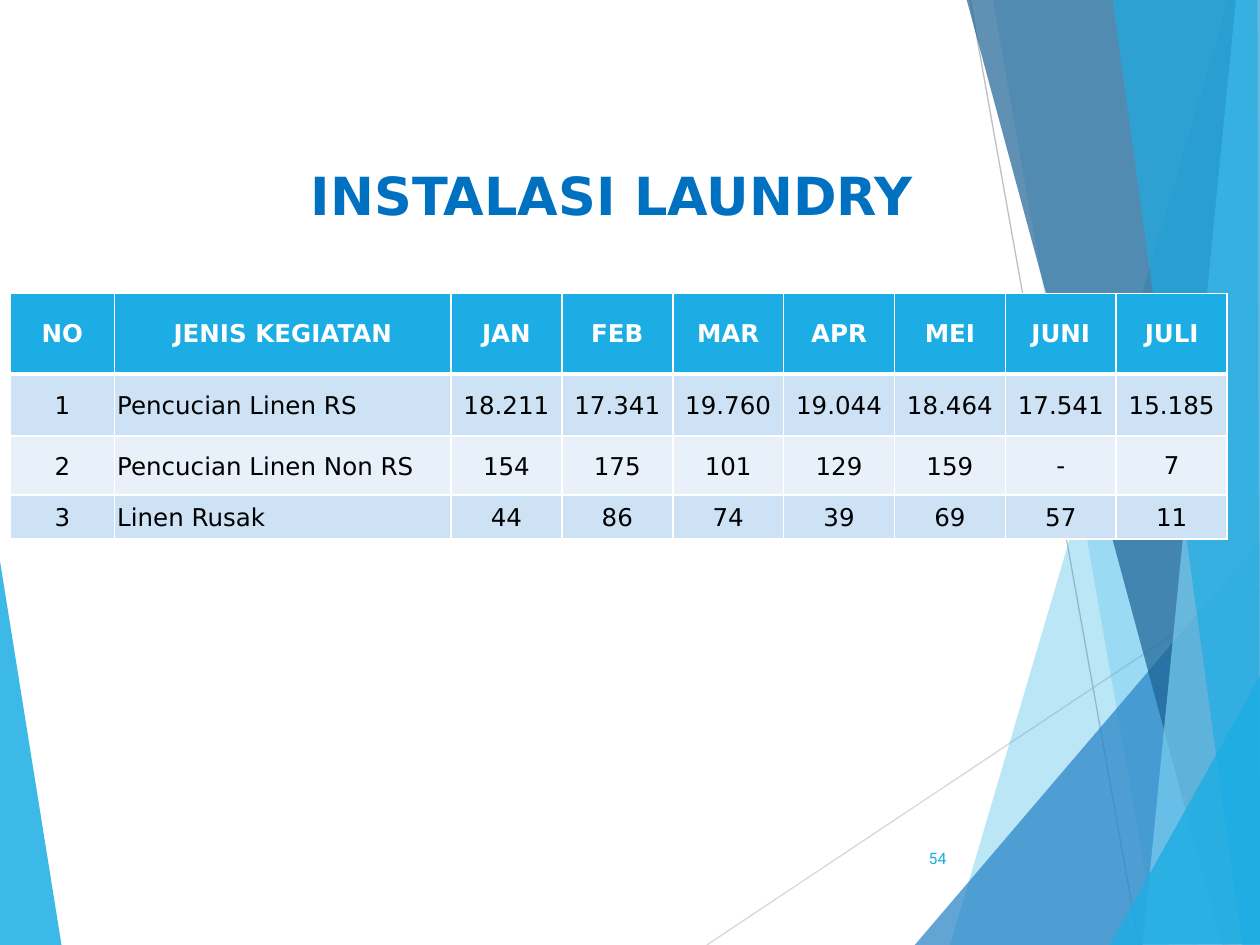
from typing import NamedTuple

from lxml import etree
from pptx import Presentation
from pptx import util as u
from pptx.dml.color import RGBColor
from pptx.enum import shapes, text
from pptx.oxml.ns import qn

FONT = "DejaVu Sans"
CENTER, LEFT, RIGHT = text.PP_ALIGN.CENTER, text.PP_ALIGN.LEFT, text.PP_ALIGN.RIGHT
MIDDLE = text.MSO_ANCHOR.MIDDLE
BLUE, WHITE, BLACK = "1CADE4", "FFFFFF", "000000"


class Facet(NamedTuple):
    color: str
    opacity: int  # percent
    points: list[tuple[float, float]]


class Ray(NamedTuple):
    start: tuple[float, float]
    end: tuple[float, float]
    color: str


class RowStyle(NamedTuple):
    height: float
    fill: str


RAYS = [
    Ray((5.61, 7.5), (10.01, 4.57), "D9D9D9"),
    Ray((7.7, 0), (9.04, 7.5), "BFBFBF"),
]
LEFT_FACET = Facet(BLUE, 85, [(-0.01, 4.39), (0.49, 7.51), (-0.01, 7.5)])
RIGHT_FACETS = [
    Facet(BLUE, 30, [(9.75, 0), (7.54, 7.5), (10.02, 7.51), (10.01, 0.01)]),
    Facet(BLUE, 20, [(7.88, -0.01), (9.19, 7.5), (10.01, 7.5), (10.01, -0.01)]),
    Facet("2683C6", 72, [(7.26, 7.5), (10, 4.29), (10.01, 7.5)]),
    Facet("1D6294", 70, [(7.67, -0.01), (9.7, 7.5), (10.01, 7.49), (10.01, -0.01)]),
    Facet("77CEEF", 70, [(9.81, -0.01), (9.07, 7.5), (10.01, 7.5), (10, -0.01)]),
    Facet(BLUE, 65, [(8.83, -0.01), (9.86, 7.5), (10, 7.5), (9.98, -0.01)]),
    Facet(BLUE, 80, [(8.81, 7.5), (10.01, 5.35), (10.01, 7.49)]),
]

COLUMNS = [0.83, 2.67] + [0.88] * 7
ROW_STYLES = [RowStyle(0.64, BLUE), RowStyle(0.49, "CDE3F5"),
              RowStyle(0.47, "E8F1FA"), RowStyle(0.35, "CDE3F5")]
ROWS = [
    ["NO", "JENIS KEGIATAN", "JAN", "FEB", "MAR", "APR", "MEI", "JUNI", "JULI"],
    ["1", "Pencucian Linen RS", "18.211", "17.341", "19.760", "19.044",
     "18.464", "17.541", "15.185"],
    ["2", "Pencucian Linen Non RS", "154", "175", "101", "129", "159", "-", "7"],
    ["3", "Linen Rusak", "44", "86", "74", "39", "69", "57", "11"],
]


def rgb(color: str) -> RGBColor:
    return RGBColor.from_string(color)


def write(tf, content: str, *, size: float, color: str, font: str = FONT,
          bold: bool = False, align=CENTER) -> None:
    p = tf.paragraphs[0]
    p.alignment = align
    r = p.add_run()
    r.text = content
    r.font.name, r.font.size, r.font.bold = font, u.Pt(size), bold
    r.font.color.rgb = rgb(color)


def add_text(s, content: str, left: float, top: float, width: float,
             height: float, **style) -> None:
    box = s.shapes.add_textbox(*map(u.Inches, (left, top, width, height)))
    tf = box.text_frame
    tf.word_wrap = True
    tf.vertical_anchor = MIDDLE
    write(tf, content, **style)


def add_facet(s, facet: Facet) -> None:
    first, *rest = [(u.Inches(x), u.Inches(y)) for x, y in facet.points]
    builder = s.shapes.build_freeform(*first)
    builder.add_line_segments(rest, close=True)
    sp = builder.convert_to_shape()
    sp.shadow.inherit = False
    sp.line.fill.background()
    sp.fill.solid()
    sp.fill.fore_color.rgb = rgb(facet.color)
    clr = sp.fill._xPr.find(".//" + qn("a:srgbClr"))
    etree.SubElement(clr, qn("a:alpha"), val=str(facet.opacity * 1000))


def add_ray(s, ray: Ray) -> None:
    line = s.shapes.add_connector(shapes.MSO_CONNECTOR.STRAIGHT,
                                  *map(u.Inches, ray.start + ray.end))
    line.line.color.rgb = rgb(ray.color)
    line.line.width = u.Pt(0.75)
    etree.SubElement(line._element.spPr, qn("a:effectLst"))


def set_borders(cell, **widths: float) -> None:
    tc_pr = cell._tc.get_or_add_tcPr()
    for side, width in widths.items():
        ln = etree.SubElement(tc_pr, qn(f"a:ln{side}"), w=str(u.Pt(width)))
        fill = etree.SubElement(ln, qn("a:solidFill"))
        etree.SubElement(fill, qn("a:srgbClr"), val=WHITE)


def add_laundry_table(s) -> None:
    heights = [style.height for style in ROW_STYLES]
    frame = s.shapes.add_table(
        len(ROWS), len(COLUMNS), u.Inches(0.08), u.Inches(2.33),
        u.Inches(sum(COLUMNS)), u.Inches(sum(heights)))
    table = frame.table
    for column, width in zip(table.columns, COLUMNS):
        column.width = u.Inches(width)
    for i, (values, style) in enumerate(zip(ROWS, ROW_STYLES)):
        table.rows[i].height = u.Inches(style.height)
        header = i == 0
        for j, value in enumerate(values):
            cell = table.cell(i, j)
            side = 0.15 if header else 0.02 if j < 7 else 0.01
            cell.margin_left = cell.margin_right = u.Inches(side)
            cell.margin_top = u.Inches(0.07 if header else side)
            cell.margin_bottom = u.Inches(0.07 if header else 0)
            cell.vertical_anchor = MIDDLE
            set_borders(cell, L=1, R=1, T=3 if i == 1 else 1, B=3 if header else 1)
            cell.fill.solid()
            cell.fill.fore_color.rgb = rgb(style.fill)
            write(cell.text_frame, value, size=14, bold=header,
                  color=WHITE if header else BLACK,
                  align=LEFT if j == 1 and not header else CENTER)


def main() -> None:
    prs = Presentation()
    prs.slide_width, prs.slide_height = u.Inches(10), u.Inches(7.5)
    s = prs.slides.add_slide(prs.slide_layouts[6])

    # Faceted background
    add_facet(s, LEFT_FACET)
    for ray in RAYS:
        add_ray(s, ray)
    for facet in RIGHT_FACETS:
        add_facet(s, facet)

    # Title, table and page number
    add_text(s, "INSTALASI LAUNDRY", 1.33, 1.25, 7.05, 0.58,
             size=30, color="0070C0", bold=True)
    add_laundry_table(s)
    add_text(s, "54", 7.05, 6.61, 0.56, 0.4,
             size=9, color=BLUE, font="Roboto", align=RIGHT)

    prs.save("out.pptx")


if __name__ == "__main__":
    main()
